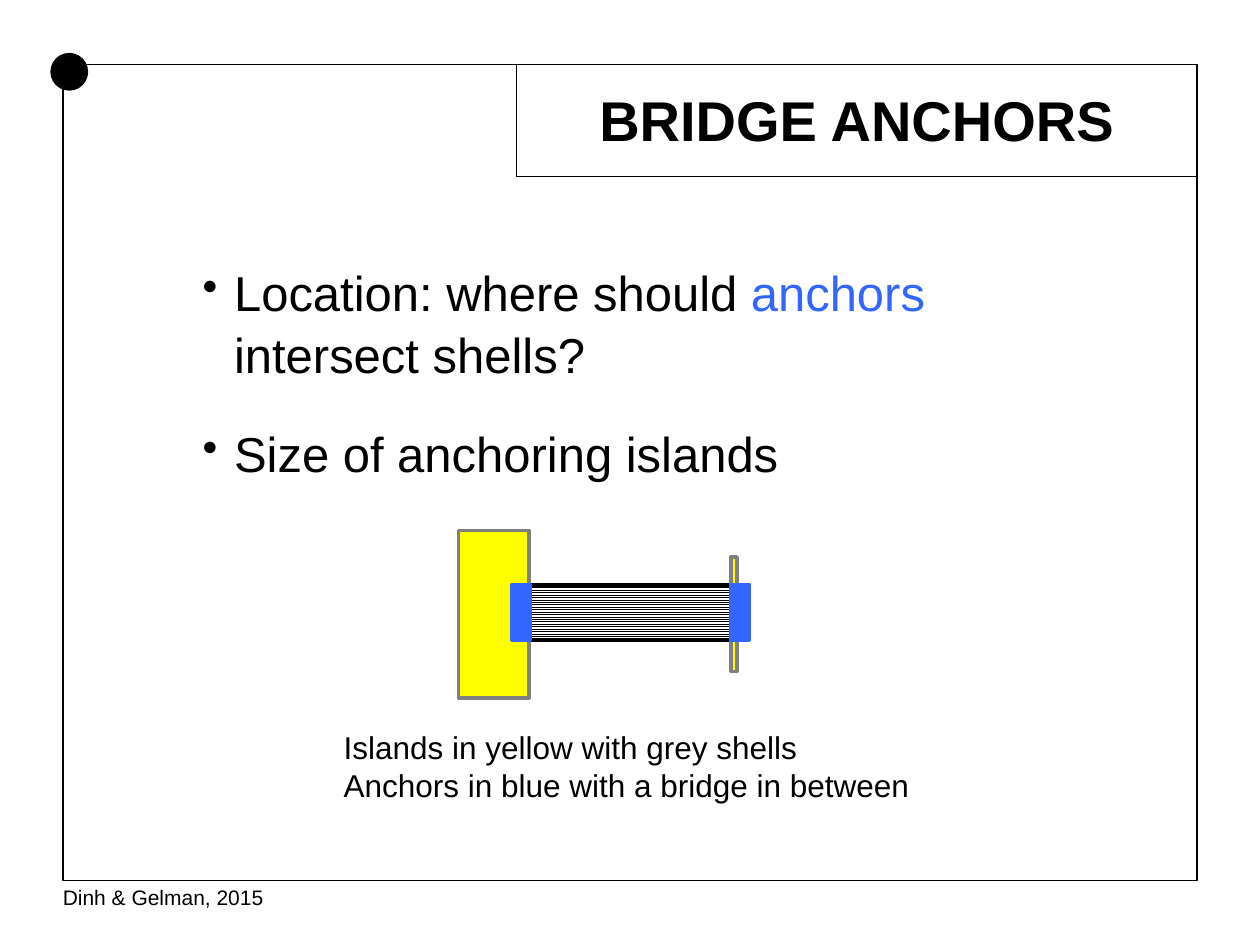
from lxml import etree
from pptx import Presentation
from pptx.dml.color import RGBColor
from pptx.enum.dml import MSO_PATTERN
from pptx.enum.shapes import MSO_SHAPE
from pptx.enum.text import MSO_ANCHOR, MSO_AUTO_SIZE, PP_ALIGN
from pptx.oxml.ns import qn
from pptx.util import Inches, Pt

RECT, OVAL = MSO_SHAPE.RECTANGLE, MSO_SHAPE.OVAL
STRIPES = MSO_PATTERN.LIGHT_HORIZONTAL
CENTER, LEFT = PP_ALIGN.CENTER, PP_ALIGN.LEFT
MIDDLE, TOP = MSO_ANCHOR.MIDDLE, MSO_ANCHOR.TOP
NO_FIT = MSO_AUTO_SIZE.NONE
FONT = "Arial"
COLORS = {
    "ink": "000000",
    "paper": "FFFFFF",
    "anchor": "3366FF",
    "island": "FFFF00",
    "shell": "808080",
}


def rgb(name):
    return RGBColor.from_string(COLORS[name])


def add_box(slide, left, top, width, height, kind=RECT, fill=None, line=None, weight=0.75):
    box = slide.shapes.add_shape(
        kind, Inches(left), Inches(top), Inches(width), Inches(height))
    box.shadow.inherit = False
    if fill:
        box.fill.solid()
        box.fill.fore_color.rgb = rgb(fill)
    else:
        box.fill.background()
    if line:
        box.line.color.rgb = rgb(line)
        box.line.width = Pt(weight)
    else:
        box.line.fill.background()
    return box


def add_bullet(paragraph, indent=0.25):
    props = paragraph._p.get_or_add_pPr()
    props.set("marL", str(Inches(indent)))
    props.set("indent", str(-Inches(indent)))
    etree.SubElement(props, qn("a:buSzPct")).set("val", "90000")
    etree.SubElement(props, qn("a:buChar")).set("char", "•")


def write_text(shape, paragraphs, size=18, bold=False, align=LEFT, anchor=TOP,
               wrap=True, spacing=None, gap=0, bullets=False):
    """Each paragraph is a list of (text, colour name) runs."""
    frame = shape.text_frame
    frame.word_wrap = wrap
    frame.auto_size = NO_FIT
    frame.vertical_anchor = anchor
    for index, runs in enumerate(paragraphs):
        paragraph = frame.add_paragraph() if index else frame.paragraphs[0]
        paragraph.alignment = align
        if spacing:
            paragraph.line_spacing = spacing
        if index:
            paragraph.space_before = Pt(gap)
        if bullets:
            add_bullet(paragraph)
        for text, color in runs:
            run = paragraph.add_run()
            run.text = text
            run.font.name = FONT
            run.font.size = Pt(size)
            run.font.bold = bold
            run.font.color.rgb = rgb(color)


def add_text(slide, left, top, width, height, paragraphs, **style):
    box = slide.shapes.add_textbox(
        Inches(left), Inches(top), Inches(width), Inches(height))
    write_text(box, paragraphs, **style)


def add_frame(slide, left, top, width, height):
    # Page border, title panel, corner dot and citation
    panel_width, dot = 5.4, 0.3
    add_box(slide, left, top, width, height, line="ink")
    add_box(slide, left + width - panel_width, top, panel_width, 0.89, line="ink")
    add_box(slide, left - 0.1, top - 0.09, dot, dot, kind=OVAL, fill="ink")
    add_text(slide, left - 0.1, top + height - 0.02, 1.81, 0.3,
             [[("Dinh & Gelman, 2015", "ink")]], size=12, wrap=False)


def add_title(slide, left, top, width, height):
    title = slide.shapes.title
    title.left, title.top = Inches(left), Inches(top)
    title.width, title.height = Inches(width), Inches(height)
    write_text(title, [[("BRIDGE ANCHORS", "ink")]], size=32, bold=True,
               align=CENTER, anchor=MIDDLE, spacing=0.8)


def add_questions(slide, left, top, width, height):
    questions = [
        [("Location: where should ", "ink"), ("anchors ", "anchor"),
         ("intersect shells?", "ink")],
        [("Size of anchoring islands", "ink")],
    ]
    add_text(slide, left, top, width, height, questions, size=28,
             spacing=1.05, gap=21.6, bullets=True)


def add_bridge_diagram(slide, left, top, width, height):
    island_width, shell_width, anchor_width = 0.56, 0.05, 0.15
    bridge_height, far_height = 0.44, 0.91
    middle = top + height / 2
    bridge_left = left + island_width
    bridge_right = left + width - anchor_width
    bridge_top = middle - bridge_height / 2 - 0.01

    # Striped bridge
    bridge = add_box(slide, bridge_left, bridge_top, bridge_right - bridge_left,
                     bridge_height, line="ink", weight=2)
    bridge.fill.patterned()
    bridge.fill.pattern = STRIPES
    bridge.fill.fore_color.rgb = rgb("ink")
    bridge.fill.back_color.rgb = rgb("paper")

    # Islands with their shells
    for x, island, tall in ((left, island_width, height),
                            (bridge_right, shell_width, far_height)):
        add_box(slide, x, middle - tall / 2, island, tall,
                fill="island", line="shell", weight=2)

    # Anchors at both ends of the bridge
    for x in (bridge_left - anchor_width + 0.01, bridge_right):
        add_box(slide, x, bridge_top, anchor_width, bridge_height,
                fill="anchor", line="anchor", weight=2)


def add_caption(slide, left, top, width, height):
    add_text(slide, left, top, width, height,
             [[("Islands in yellow with grey shells", "ink")],
              [("Anchors in blue with a bridge in between", "ink")]],
             size=18, wrap=False)


def main():
    deck = Presentation()
    deck.slide_width, deck.slide_height = Inches(10), Inches(7.5)
    slide = deck.slides.add_slide(deck.slide_layouts[5])
    add_frame(slide, 0.5, 0.51, 9, 6.48)
    add_title(slide, 4.1, 0.55, 5.4, 0.89)
    add_questions(slide, 1.51, 2.01, 7.3, 4.17)
    add_bridge_diagram(slide, 3.64, 4.21, 2.31, 1.33)
    add_caption(slide, 2.63, 5.73, 4.74, 0.71)
    deck.save("out.pptx")


if __name__ == "__main__":
    main()
